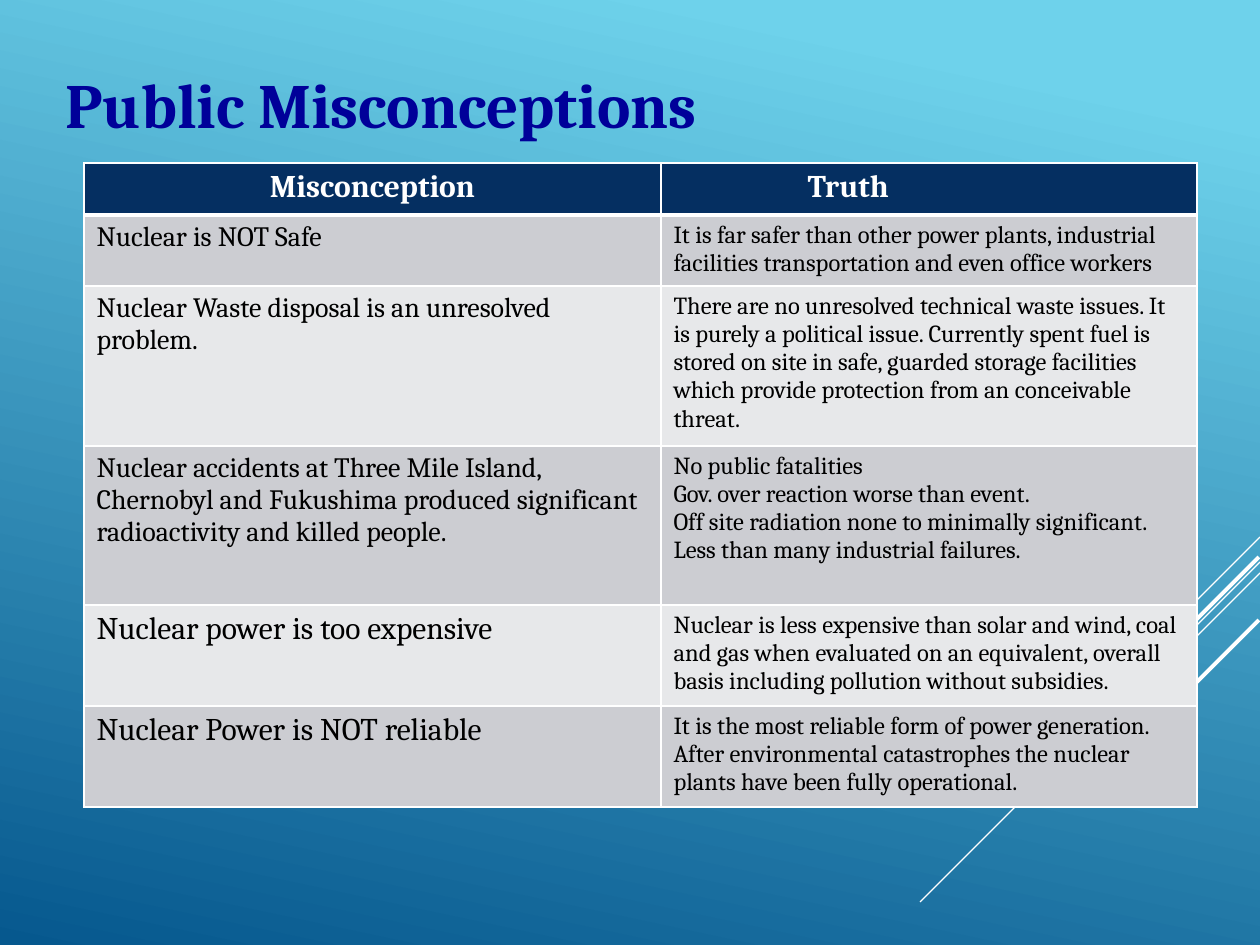
from lxml import etree
from pptx import Presentation
from pptx.dml.color import RGBColor
from pptx.enum.shapes import MSO_CONNECTOR
from pptx.enum.text import MSO_ANCHOR, PP_ALIGN
from pptx.oxml.ns import qn
from pptx.util import Emu, Pt

STRAIGHT = MSO_CONNECTOR.STRAIGHT
MIDDLE = MSO_ANCHOR.MIDDLE
LEFT, CENTER = PP_ALIGN.LEFT, PP_ALIGN.CENTER
PX_PER_INCH = 126
FONT = "Cambria"
COLORS = {
    "sky": "6ED2EB", "deep": "06588E", "title": "000099", "header": "052F61",
    "odd": "CCCDD2", "even": "E7E8EA", "white": "FFFFFF", "black": "000000",
}

# Right end x, y, then horizontal run of each 45-degree line, and its width
RAYS = [
    (1260, 537, 105, 0.75), (1260, 562, 340, 0.75), (1260, 573, 217, 0.75),
    (1259, 557, 198, 2.25), (1259, 620, 144, 2.25),
]
COL_WIDTHS = [577, 536]
ROW_HEIGHTS = [52, 71, 160, 159, 101, 101]
TRUTH_INDENT = 134
HEADERS = ["Misconception", "Truth"]
# Misconception, its text size, and the paragraphs of the truth
CLAIMS = [
    ("Nuclear is NOT Safe", 16,
     ["It is far safer than other power plants, industrial facilities "
      "transportation and even office workers"]),
    ("Nuclear Waste disposal is an unresolved problem.", 16,
     ["There are no unresolved technical waste issues. It is purely a political "
      "issue. Currently spent fuel is stored on site in safe, guarded storage "
      "facilities which provide protection from an conceivable threat."]),
    ("Nuclear accidents at Three Mile Island, Chernobyl and Fukushima produced "
     "significant radioactivity and killed people.", 16,
     ["No public fatalities",
      "Gov. over reaction worse than event.",
      "Off site radiation none to minimally significant.",
      "Less than many industrial failures."]),
    ("Nuclear power is too expensive", 18,
     ["Nuclear is less expensive than solar and wind, coal and gas when evaluated "
      "on an equivalent, overall basis including pollution without subsidies."]),
    ("Nuclear Power is NOT reliable", 18,
     ["It is the most reliable form of power generation. After environmental "
      "catastrophes the nuclear plants have been fully operational."]),
]


def px(n):
    return Emu(round(n * 914400 / PX_PER_INCH))


def rgb(name):
    return RGBColor.from_string(COLORS[name])


def write(tf, lines, size, color, bold=False, align=LEFT):
    tf.text = "\n".join(lines)
    for p in tf.paragraphs:
        p.alignment = align
        for r in p.runs:
            for key, value in {"name": FONT, "size": Pt(size), "bold": bold}.items():
                setattr(r.font, key, value)
            r.font.color.rgb = rgb(color)


def paint_background(s):
    fill = s.background.fill
    fill.gradient()
    fill.gradient_angle = 258
    for stop, color, position in zip(fill.gradient_stops, ("sky", "deep"), (0.1, 1)):
        stop.color.rgb = rgb(color)
        stop.position = position


def add_ray(s, x, y, run, width):
    line = s.shapes.add_connector(STRAIGHT, px(x), px(y), px(x - run), px(y + run))
    line.line.color.rgb = rgb("white")
    line.line.width = Pt(width)
    etree.SubElement(line._element.spPr, qn("a:effectLst"))


def place_title(s, text):
    sp = s.shapes.title
    box = {"left": 53, "top": 58, "width": 1110, "height": 90}
    for key, value in box.items():
        setattr(sp, key, px(value))
    sp.text_frame.vertical_anchor = MIDDLE
    write(sp.text_frame, [text], 36, "title", bold=True)


def set_borders(cell, top, bottom):
    """Draw white borders; must run before the cell is filled."""
    tcPr = cell._tc.get_or_add_tcPr()
    for side, width in {"L": 1, "R": 1, "T": top, "B": bottom}.items():
        ln = etree.SubElement(tcPr, qn(f"a:ln{side}"), w=str(Pt(width)))
        fill = etree.SubElement(ln, qn("a:solidFill"))
        etree.SubElement(fill, qn("a:srgbClr"), val=COLORS["white"])


def style_cell(cell, row):
    set_borders(cell, top=3 if row == 1 else 1, bottom=3 if row == 0 else 1)
    cell.fill.solid()
    cell.fill.fore_color.rgb = rgb("header" if row == 0 else "odd" if row % 2 else "even")


def add_claims_table(s):
    table = s.shapes.add_table(
        len(ROW_HEIGHTS), len(COL_WIDTHS), px(84), px(163),
        px(sum(COL_WIDTHS)), px(sum(ROW_HEIGHTS))).table
    table.horz_banding = False
    for column, width in zip(table.columns, COL_WIDTHS):
        column.width = px(width)
    for i, (row, height) in enumerate(zip(table.rows, ROW_HEIGHTS)):
        row.height = px(height)
        for cell in row.cells:
            style_cell(cell, i)

    for col, (text, align) in enumerate(zip(HEADERS, (CENTER, LEFT))):
        write(table.cell(0, col).text_frame, [text], 18, "white", True, align)
    pPr = table.cell(0, 1).text_frame.paragraphs[0]._p.get_or_add_pPr()
    pPr.set("marL", str(px(TRUTH_INDENT)))

    for i, (claim, size, truth) in enumerate(CLAIMS, start=1):
        write(table.cell(i, 0).text_frame, [claim], size, "black")
        write(table.cell(i, 1).text_frame, truth, 14, "black")


def main():
    prs = Presentation()
    prs.slide_width, prs.slide_height = px(1260), px(945)
    s = prs.slides.add_slide(prs.slide_layouts[5])
    paint_background(s)
    for ray in RAYS:
        add_ray(s, *ray)
    place_title(s, "Public Misconceptions")
    add_claims_table(s)
    prs.save("out.pptx")


if __name__ == "__main__":
    main()
